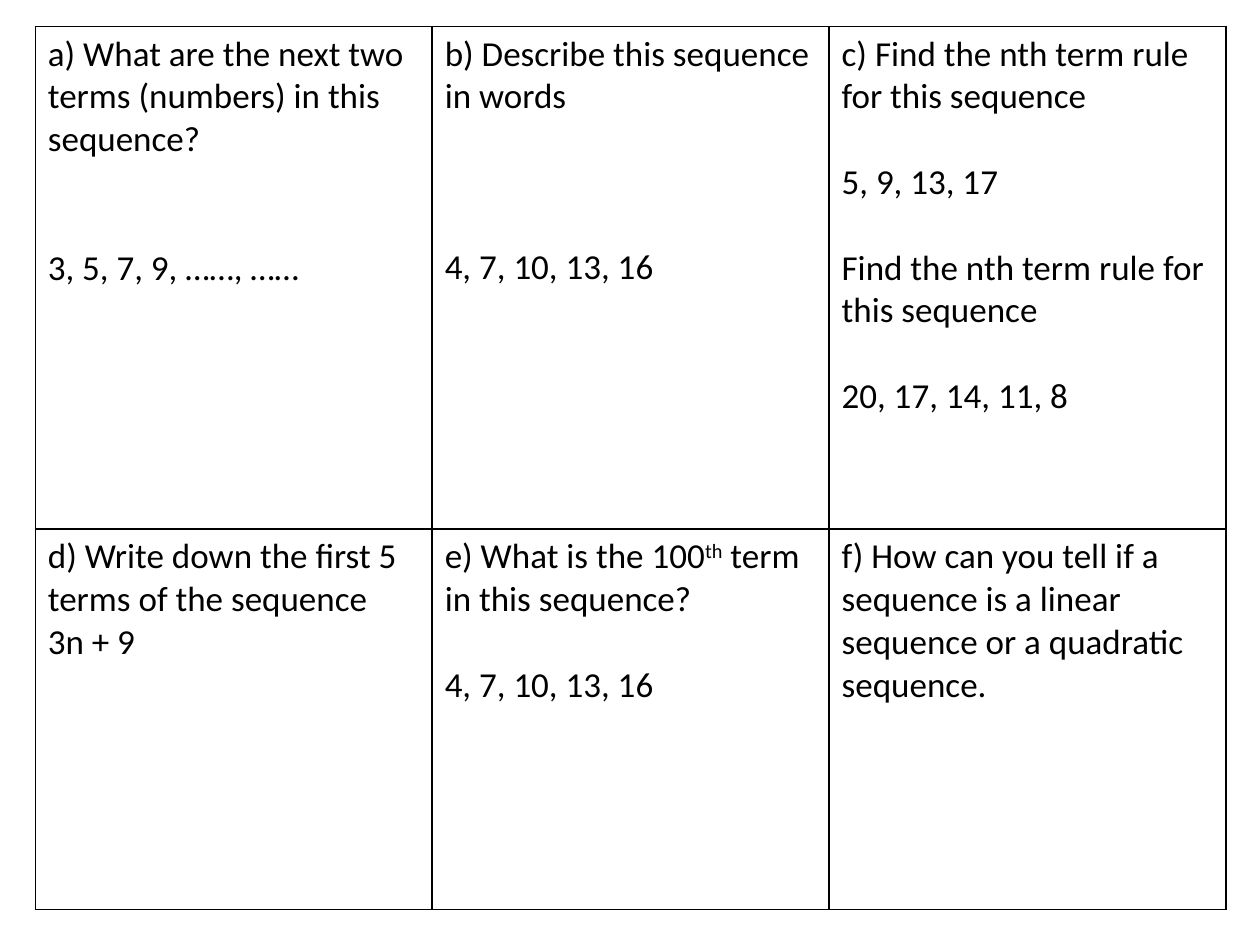
from dataclasses import dataclass

from lxml.etree import SubElement
from pptx import Presentation
from pptx.dml.color import RGBColor
from pptx.oxml.ns import qn
from pptx.util import Inches, Pt

COLORS = {"ink": "000000", "paper": "FFFFFF"}
TEXT_FORMAT = {"name": "Calibri", "size": Pt(20), "bold": False}
TABLE_FORMAT = {"first_row": False, "horz_banding": False}
LINE_PITCH = 24.4  # points taken by one line of 20 pt Calibri
BORDER_WIDTH = Pt(1)
COLUMN_WIDTH = Inches(3.15)
ROW_HEIGHTS = [Inches(3.99), Inches(3.02)]


@dataclass
class Line:
    """A paragraph, with the number of free lines above it."""
    text: str
    lines_above: int = 0
    superscript: str = ""
    ending: str = ""


QUESTIONS = [
    [
        [Line("a) What are the next two terms (numbers) in this sequence?"),
         Line("3, 5, 7, 9, ……, ……", 2)],
        [Line("b) Describe this sequence in words"),
         Line("4, 7, 10, 13, 16", 3)],
        [Line("c) Find the nth term rule for this sequence"),
         Line("5, 9, 13, 17", 1),
         Line("Find the nth term rule for this sequence", 1),
         Line("20, 17, 14, 11, 8", 1)],
    ],
    [
        [Line("d) Write down the first 5 terms of the sequence"),
         Line("3n + 9")],
        [Line("e) What is the 100", superscript="th", ending=" term in this sequence?"),
         Line("4, 7, 10, 13, 16", 1)],
        [Line("f) How can you tell if a sequence is a linear sequence "
              "or a quadratic sequence.")],
    ],
]


def apply_format(target: object, values: dict) -> None:
    for name, value in values.items():
        setattr(target, name, value)


def add_span(para, text: str, raised: bool = False) -> None:
    span = para.add_run()
    span.text = text
    apply_format(span.font, TEXT_FORMAT)
    span.font.color.rgb = RGBColor.from_string(COLORS["ink"])
    if raised:
        span._r.get_or_add_rPr().set("baseline", "30000")


def write_question(cell, lines: list[Line]) -> None:
    frame = cell.text_frame
    for index, line in enumerate(lines):
        para = frame.add_paragraph() if index else frame.paragraphs[0]
        para.space_before = Pt(line.lines_above * LINE_PITCH)
        add_span(para, line.text)
        if line.superscript:
            add_span(para, line.superscript, raised=True)
            add_span(para, line.ending)


def style_cell(cell) -> None:
    # Borders come before the fill in the cell properties
    properties = cell._tc.get_or_add_tcPr()
    for side in ("a:lnL", "a:lnR", "a:lnT", "a:lnB"):
        border = SubElement(properties, qn(side), w=str(BORDER_WIDTH))
        fill = SubElement(border, qn("a:solidFill"))
        SubElement(fill, qn("a:srgbClr"), val=COLORS["ink"])
    cell.fill.solid()
    cell.fill.fore_color.rgb = RGBColor.from_string(COLORS["paper"])


def add_question_grid(page) -> None:
    rows, columns = len(QUESTIONS), len(QUESTIONS[0])
    table = page.shapes.add_table(
        rows, columns, Inches(0.28), Inches(0.21),
        COLUMN_WIDTH * columns, sum(ROW_HEIGHTS)).table
    apply_format(table, TABLE_FORMAT)
    for column in table.columns:
        column.width = COLUMN_WIDTH
    for row, height, questions in zip(table.rows, ROW_HEIGHTS, QUESTIONS):
        row.height = height
        for cell, lines in zip(row.cells, questions):
            style_cell(cell)
            write_question(cell, lines)


def main() -> None:
    deck = Presentation()
    deck.slide_width, deck.slide_height = Inches(10), Inches(7.5)
    page = deck.slides.add_slide(deck.slide_layouts[6])
    add_question_grid(page)
    deck.save("out.pptx")


if __name__ == "__main__":
    main()
